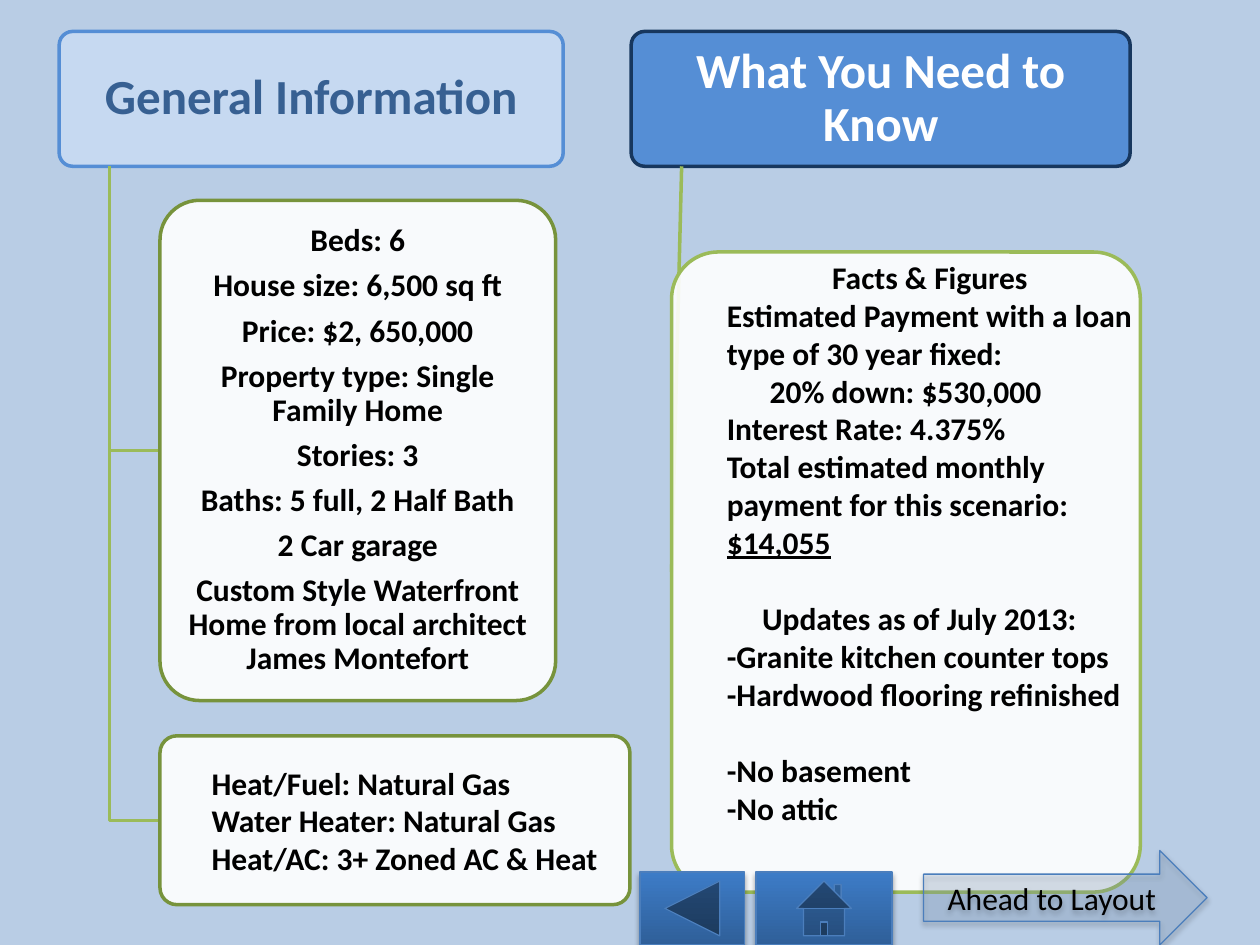
from lxml.etree import SubElement as Sub
from pptx import Presentation
from pptx.dml.color import RGBColor as Rgb
from pptx.enum.shapes import MSO_CONNECTOR as Wire, MSO_SHAPE as Kind
from pptx.enum.text import MSO_ANCHOR as Anchor, PP_ALIGN as Align
from pptx.oxml.ns import qn
from pptx.util import Inches, Pt

hues = {
    "back": "B9CDE5", "pale": "C6D9F1", "blue": "558ED5", "navy": "17375E",
    "title": "376092", "white": "FFFFFF", "black": "000000", "lime": "9BBB59",
    "moss": "77933C", "arrow": "95B3D7", "edge": "4B7EBC",
    "deep": "2F5F99", "light": "3D7CC7",
}
hue = {name: Rgb.from_string(code) for name, code in hues.items()}

deck = Presentation()
deck.slide_width, deck.slide_height = Inches(10), Inches(7.5)
col, row = deck.slide_width / 100, deck.slide_height / 75
slide = deck.slides.add_slide(deck.slide_layouts[6])
slide.background.fill.solid()
slide.background.fill.fore_color.rgb = hue["back"]
draw = slide.shapes


def shape(kind, box, fill, edge, thick=2, alpha=100):
    x, y, w, h = box
    item = draw.add_shape(kind, int(x * col), int(y * row), int(w * col), int(h * row))
    item.shadow.inherit = False
    item.line.color.rgb = hue[edge]
    item.line.width = Pt(thick)
    if kind == Kind.ROUNDED_RECTANGLE:
        item.adjustments[0] = 0.1
    if fill:
        item.fill.solid()
        item.fill.fore_color.rgb = hue[fill]
        if alpha < 100:
            tone = item.fill._xPr.find(".//" + qn("a:srgbClr"))
            Sub(tone, qn("a:alpha"), val=str(alpha * 1000))
    else:
        item.fill.gradient()
        item.fill.gradient_angle = 90
        for stop, name in zip(item.fill.gradient_stops, ("deep", "light")):
            stop.color.rgb = hue[name]
    if edge == "edge":
        glow = item._element.spPr.find(qn("a:effectLst"))
        cast = Sub(glow, qn("a:outerShdw"), blurRad=str(Pt(3.1)),
                   dist=str(Pt(1.8)), dir="5400000", rotWithShape="0")
        dark = Sub(cast, qn("a:srgbClr"), val=hues["black"])
        Sub(dark, qn("a:alpha"), val="35000")
    return item


def write(item, lines, frame, para, size=18, tint="black", bold=True):
    text = item.text_frame
    text.word_wrap = True
    for key, val in frame.items():
        setattr(text, key, val)
    for i, line in enumerate(lines):
        part = text.paragraphs[0] if i == 0 else text.add_paragraph()
        part.text = line
        for key, val in para.items():
            setattr(part, key, val)
        look = {"name": "Calibri", "size": Pt(size), "bold": bold}
        for key, val in look.items():
            setattr(part.runs[0].font, key, val)
        part.runs[0].font.color.rgb = hue[tint]
    return text.paragraphs


slim = {"vertical_anchor": Anchor.MIDDLE, "margin_left": Inches(0.06),
        "margin_right": Inches(0.06), "margin_top": Inches(0.04),
        "margin_bottom": Inches(0.04)}
tight = slim | {"margin_left": Inches(0.04), "margin_right": Inches(0.04)}
mid = {"alignment": Align.CENTER, "line_spacing": 0.9}
left = {"alignment": Align.LEFT}
round_box = Kind.ROUNDED_RECTANGLE

heads = [
    ("General Information", (4.7, 2.5, 40, 10.7), "pale", "blue", "title"),
    ("What You Need to Know", (50.1, 2.5, 39.6, 10.7), "blue", "navy", "white"),
]
for words, box, fill, edge, tint in heads:
    write(shape(round_box, box, fill, edge), [words], slim, mid, 28, tint)

home = [
    "Beds: 6", "House size: 6,500 sq ft", "Price: $2, 650,000",
    "Property type: Single Family Home", "Stories: 3",
    "Baths: 5 full, 2 Half Bath", "2 Car garage",
    "Custom Style Waterfront Home from local architect James Montefort",
]
heat = ["Heat/Fuel: Natural Gas", "Water Heater: Natural Gas",
        "Heat/AC: 3+ Zoned AC & Heat"]
cards = [
    ((12.7, 15.9, 31.4, 39.7), home, tight, mid | {"space_after": Pt(6.3)}),
    ((12.7, 58.4, 37.3, 13.4), heat, tight | {"margin_left": Inches(0.37)}, left),
]
for box, lines, frame, para in cards:
    x, y, w, h = box
    turn = y + h / 2
    pen = draw.build_freeform(int(8.7 * col), int(13.2 * row))
    pen.add_line_segments([(int(8.7 * col), int(turn * row)),
                           (int(x * col), int(turn * row))], close=False)
    bend = pen.convert_to_shape()
    bend.shadow.inherit = False
    bend.fill.background()
    bend.line.color.rgb = hue["lime"]
    bend.line.width = Pt(2)
    write(shape(round_box, box, "white", "moss", alpha=90), lines, frame, para)

panel = shape(round_box, (53.3, 20, 37.2, 50.8), "white", "lime", alpha=90)
stem = draw.add_connector(Wire.STRAIGHT, int(54.1 * col), int(13.2 * row),
                          int(53.3 * col), int(45.4 * row))
stem.end_connect(panel, 1)
stem.line.color.rgb = hue["lime"]
stem.line.width = Pt(2)
Sub(stem._element.spPr, qn("a:effectLst"))
panel._element.addprevious(stem._element)

facts = [
    "Facts & Figures", "Estimated Payment with a loan type of 30 year fixed:",
    "20% down: $530,000", "Interest Rate: 4.375%",
    "Total estimated monthly payment for this scenario:",
    "Updates as of July 2013:", "-Granite kitchen counter tops",
    "-Hardwood flooring refinished", "-No basement", "-No attic",
]
note = draw.add_textbox(int(56.7 * col), int(20 * row), int(34.2 * col), int(52.5 * row))
parts = write(note, facts, {}, left)
parts[0].alignment = Align.CENTER
for i, dent in ((2, 0.34), (5, 0.28)):
    parts[i]._p.get_or_add_pPr().set("marL", str(Inches(dent)))
for i in (5, 8):
    parts[i].space_before = Pt(22)
parts[4].add_line_break()
cost = parts[4].add_run()
cost.text = "$14,055"
look = {"name": "Calibri", "size": Pt(18), "bold": True, "underline": True}
for key, val in look.items():
    setattr(cost.font, key, val)
cost.font.color.rgb = hue["black"]

shape(Kind.ACTION_BUTTON_HOME, (60, 69.2, 10.8, 5.8), None, "edge", 0.75)
ahead = shape(Kind.RIGHT_ARROW, (73.3, 67.5, 22.5, 7.5), "arrow", "edge", 0.75, 24)
write(ahead, ["Ahead to Layout"], slim | {"margin_left": Inches(0.19)}, left, bold=False)
shape(Kind.ACTION_BUTTON_BACK_OR_PREVIOUS, (50.8, 69.2, 8.3, 5.8), None, "edge", 0.75)

deck.save("out.pptx")
